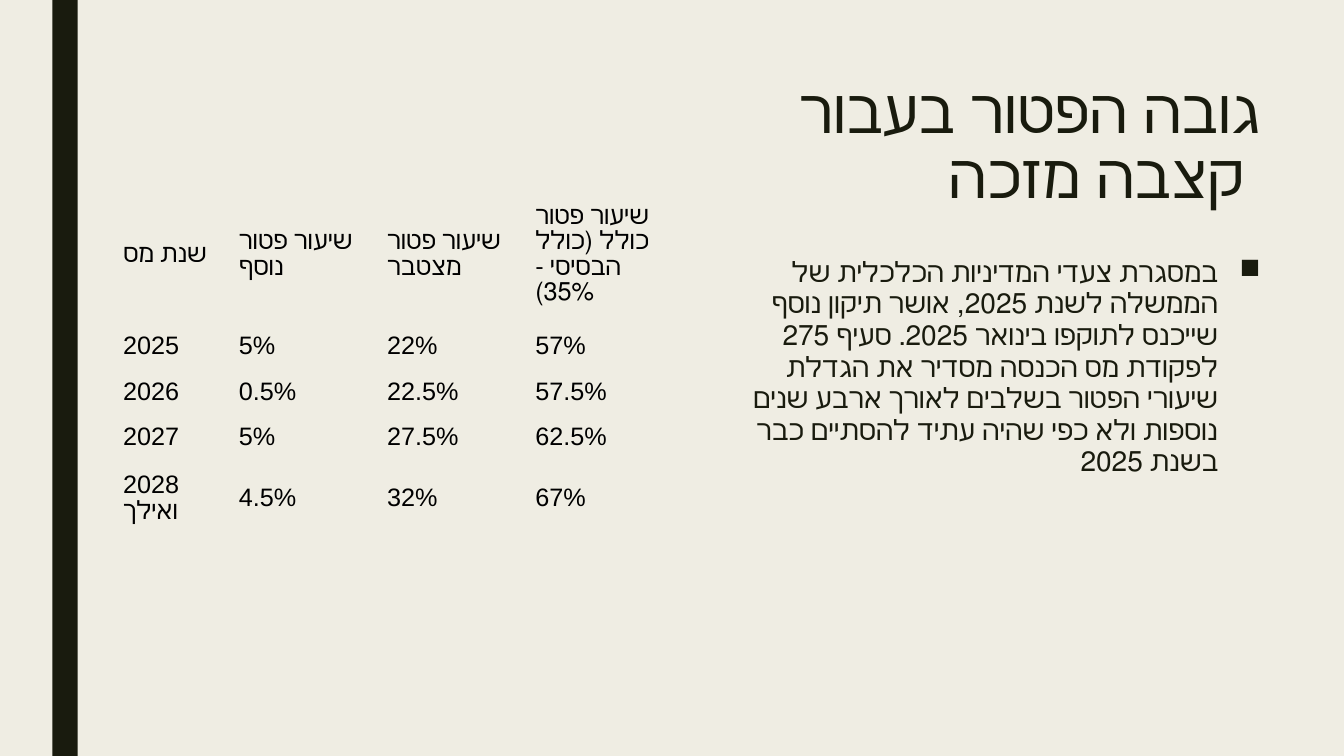
from pptx import Presentation
from pptx.dml.color import RGBColor
from pptx.enum.shapes import MSO_SHAPE
from pptx.enum.text import MSO_ANCHOR, PP_ALIGN
from pptx.oxml.ns import qn
from pptx.util import Inches, Pt
from lxml import etree

INK = "191B0E"


def color(hex_code):
    return RGBColor.from_string(hex_code)


def format_text(paragraph, size, typeface, ink):
    for run in paragraph.runs:
        run.font.size = Pt(size)
        run.font.name = typeface
        run.font.color.rgb = color(ink)


prs = Presentation()
prs.slide_width, prs.slide_height = Inches(13.33), Inches(7.5)
slide = prs.slides.add_slide(prs.slide_layouts[6])
slide.background.fill.solid()
slide.background.fill.fore_color.rgb = color("EFEDE3")

# Title and explanation, right-hand column
title = slide.shapes.add_textbox(Inches(6.99), Inches(0.75), Inches(5.61), Inches(1.62))
title.text_frame.word_wrap = True
heading = title.text_frame.paragraphs[0]
heading.text = "גובה הפטור בעבור קצבה מזכה "
heading.alignment = PP_ALIGN.RIGHT
heading.line_spacing = 0.89
format_text(heading, 44, "Cabin", INK)

explanation = slide.shapes.add_textbox(Inches(6.99), Inches(2.5), Inches(5.61), Inches(3.92))
explanation.text_frame.word_wrap = True
reform = explanation.text_frame.paragraphs[0]
reform.text = (
    "במסגרת צעדי המדיניות הכלכלית של הממשלה לשנת 2025, אושר תיקון נוסף "
    "שייכנס לתוקפו בינואר 2025. סעיף 275 לפקודת מס הכנסה מסדיר את הגדלת "
    "שיעורי הפטור בשלבים לאורך ארבע שנים נוספות ולא כפי שהיה עתיד להסתיים "
    "כבר בשנת 2025"
)
reform.alignment = PP_ALIGN.RIGHT
reform.line_spacing = 0.94
reform.space_before, reform.space_after = Pt(10), Pt(2)
format_text(reform, 20, "Cabin", INK)

# Right-to-left hanging bullet
reform_props = reform._p.get_or_add_pPr()
reform_props.set("rtl", "1")
reform_props.set("marL", str(Inches(0.42)))
reform_props.set("indent", str(-Inches(0.42)))
etree.SubElement(reform_props, qn("a:buChar")).set("char", "■")

# Vertical bar on the left
bar = slide.shapes.add_shape(MSO_SHAPE.RECTANGLE, Inches(0.52), 0, Inches(0.25), Inches(7.5))
bar.shadow.inherit = False
bar.fill.solid()
bar.fill.fore_color.rgb = color(INK)
bar.line.fill.background()

# Exemption rates by tax year
rates = [
    ["שנת מס", "שיעור פטור נוסף", "שיעור פטור מצטבר", "שיעור פטור כולל (כולל הבסיסי - 35%)"],
    ["2025", "5%", "22%", "57%"],
    ["2026", "0.5%", "22.5%", "57.5%"],
    ["2027", "5%", "27.5%", "62.5%"],
    ["2028 ואילך", "4.5%", "32%", "67%"],
]
rate_table = slide.shapes.add_table(
    5, 4, Inches(1.12), Inches(1.85), Inches(5.55), Inches(3.45)
).table
rate_table.first_row = rate_table.horz_banding = False
for column, width in zip(rate_table.columns, [1.15, 1.47, 1.47, 1.47]):
    column.width = Inches(width)
for row, height, values in zip(rate_table.rows, [1.36, 0.45, 0.45, 0.45, 0.75], rates):
    row.height = Inches(height)
    for cell, value in zip(row.cells, values):
        cell.text_frame.text = value
        cell.vertical_anchor = MSO_ANCHOR.MIDDLE
        cell.fill.background()
        format_text(cell.text_frame.paragraphs[0], 18, "Arial", "000000")

# Plain table style: no borders
rate_table._tbl.tblPr.find(qn("a:tableStyleId")).text = "{2D5ABB26-0587-4C30-8999-92F81FD0307C}"

prs.save("out.pptx")
